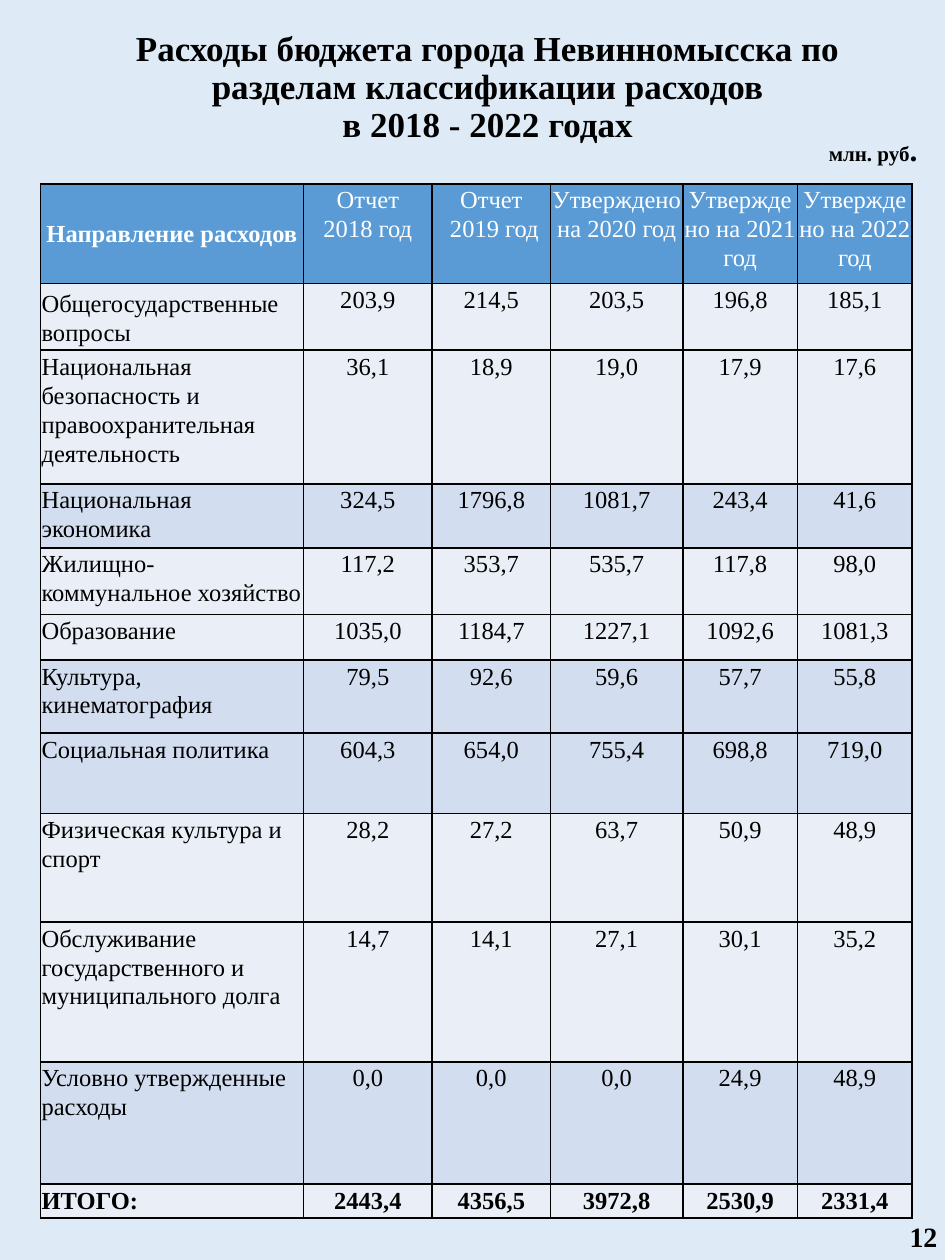
from lxml import etree
from pptx import Presentation
from pptx.dml.color import RGBColor
from pptx.enum.text import MSO_ANCHOR, PP_ALIGN
from pptx.oxml.ns import qn
from pptx.util import Inches, Pt

LEFT, CENTER, RIGHT = PP_ALIGN.LEFT, PP_ALIGN.CENTER, PP_ALIGN.RIGHT
TOP, MIDDLE = MSO_ANCHOR.TOP, MSO_ANCHOR.MIDDLE
FONT = "Times New Roman"
BLACK, WHITE = "000000", "FFFFFF"
BACKGROUND, HEADER, LIGHT, DARK = "DEEBF7", "5B9BD5", "EAEFF7", "D2DEEF"

# Content
TITLE = [
    "Расходы бюджета города Невинномысска по разделам классификации расходов",
    "в 2018 - 2022 годах",
]
UNIT = "млн. руб"
PAGE_NUMBER = "12"
COLUMNS = [  # heading, width
    ("Направление расходов", 2.09),
    ("Отчет\n2018 год", 1.02),
    ("Отчет\n 2019 год", 0.94),
    ("Утверждено на 2020 год", 1.05),
    ("Утверждено на 2021 год", 0.91),
    ("Утверждено на 2022 год", 0.91),
]
HEADER_HEIGHT = 0.79
EXPENSES = [  # section, amounts by year, row height, fill
    ("Общегосударственные вопросы", "203,9 214,5 203,5 196,8 185,1", 0.53, LIGHT),
    ("Национальная безопасность и правоохранительная деятельность",
     "36,1 18,9 19,0 17,9 17,6", 1.06, LIGHT),
    ("Национальная экономика", "324,5 1796,8 1081,7 243,4 41,6", 0.36, DARK),
    ("Жилищно-коммунальное хозяйство", "117,2 353,7 535,7 117,8 98,0", 0.53, LIGHT),
    ("Образование", "1035,0 1184,7 1227,1 1092,6 1081,3", 0.36, LIGHT),
    ("Культура, кинематография", "79,5 92,6 59,6 57,7 55,8", 0.58, DARK),
    ("Социальная политика", "604,3 654,0 755,4 698,8 719,0", 0.64, DARK),
    ("Физическая культура и спорт", "28,2 27,2 63,7 50,9 48,9", 0.86, LIGHT),
    ("Обслуживание государственного и муниципального долга",
     "14,7 14,1 27,1 30,1 35,2", 1.11, LIGHT),
    ("Условно утвержденные расходы", "0,0 0,0 0,0 24,9 48,9", 0.97, DARK),
    ("ИТОГО:", "2443,4 4356,5 3972,8 2530,9 2331,4", 0.27, LIGHT),
]


def color(value):
    return RGBColor.from_string(value)


def write(frame, paragraphs, size=14, bold=False, ink=BLACK, align=LEFT, spacing=None):
    """Each paragraph is a string or a list of (text, size) runs."""
    for i, content in enumerate(paragraphs):
        paragraph = frame.paragraphs[0] if i == 0 else frame.add_paragraph()
        paragraph.alignment = align
        paragraph.line_spacing = spacing
        runs = [(content, size)] if isinstance(content, str) else content
        for text, points in runs:
            run = paragraph.add_run()
            run.text = text
            run.font.name, run.font.size, run.font.bold = FONT, Pt(points), bold
            run.font.color.rgb = color(ink)


def add_text(slide, box, paragraphs, anchor=TOP, **style):
    frame = slide.shapes.add_textbox(*map(Inches, box)).text_frame
    frame.word_wrap = True
    frame.vertical_anchor = anchor
    write(frame, paragraphs, **style)


def add_borders(cell):
    properties = cell._tc.get_or_add_tcPr()
    for position, side in enumerate(("lnL", "lnR", "lnT", "lnB")):
        line = etree.Element(qn(f"a:{side}"), w=str(Pt(1)))
        fill = etree.SubElement(line, qn("a:solidFill"))
        etree.SubElement(fill, qn("a:srgbClr"), val=BLACK)
        properties.insert(position, line)


def fill_cell(cell, text, fill, anchor=TOP, inset=0.01, **style):
    cell.margin_left = cell.margin_right = cell.margin_top = Inches(inset)
    cell.margin_bottom = 0
    cell.vertical_anchor = anchor
    cell.fill.solid()
    cell.fill.fore_color.rgb = color(fill)
    add_borders(cell)
    write(cell.text_frame, text.split("\n"), spacing=1.07, **style)


def add_expense_table(slide):
    widths = [width for _, width in COLUMNS]
    heights = [HEADER_HEIGHT] + [height for _, _, height, _ in EXPENSES]
    box = map(Inches, (0.32, 1.46, sum(widths), sum(heights)))
    table = slide.shapes.add_table(len(heights), len(widths), *box).table
    for column, width in zip(table.columns, widths):
        column.width = Inches(width)
    for row, height in zip(table.rows, heights):
        row.height = Inches(height)

    # Header row
    for c, (heading, _) in enumerate(COLUMNS):
        first = c == 0
        fill_cell(table.cell(0, c), heading, HEADER, ink=WHITE, align=CENTER, bold=first,
                  anchor=MIDDLE if first else TOP, inset=0 if first else 0.01)

    # Sections and the total
    for r, (section, amounts, _, fill) in enumerate(EXPENSES, 1):
        total = r == len(EXPENSES)
        fill_cell(table.cell(r, 0), section, fill, bold=total,
                  anchor=MIDDLE if r == 1 else TOP)
        for c, amount in enumerate(amounts.split(), 1):
            fill_cell(table.cell(r, c), amount, fill, bold=total, align=CENTER)


def main():
    deck = Presentation()
    deck.slide_width, deck.slide_height = Inches(7.5), Inches(10)
    slide = deck.slides.add_slide(deck.slide_layouts[6])
    slide.background.fill.solid()
    slide.background.fill.fore_color.rgb = color(BACKGROUND)

    add_text(slide, (0.76, 0.48, 6.22, 0.44), TITLE, anchor=MIDDLE,
             size=20, bold=True, align=CENTER, spacing=0.9)
    add_expense_table(slide)
    add_text(slide, (6.27, 0.98, 1.11, 0.4), [[(UNIT, 12), (".", 18)]],
             bold=True, align=RIGHT)
    add_text(slide, (7.12, 9.63, 0.51, 0.37), [PAGE_NUMBER], size=16, bold=True)
    deck.save("out.pptx")


if __name__ == "__main__":
    main()
